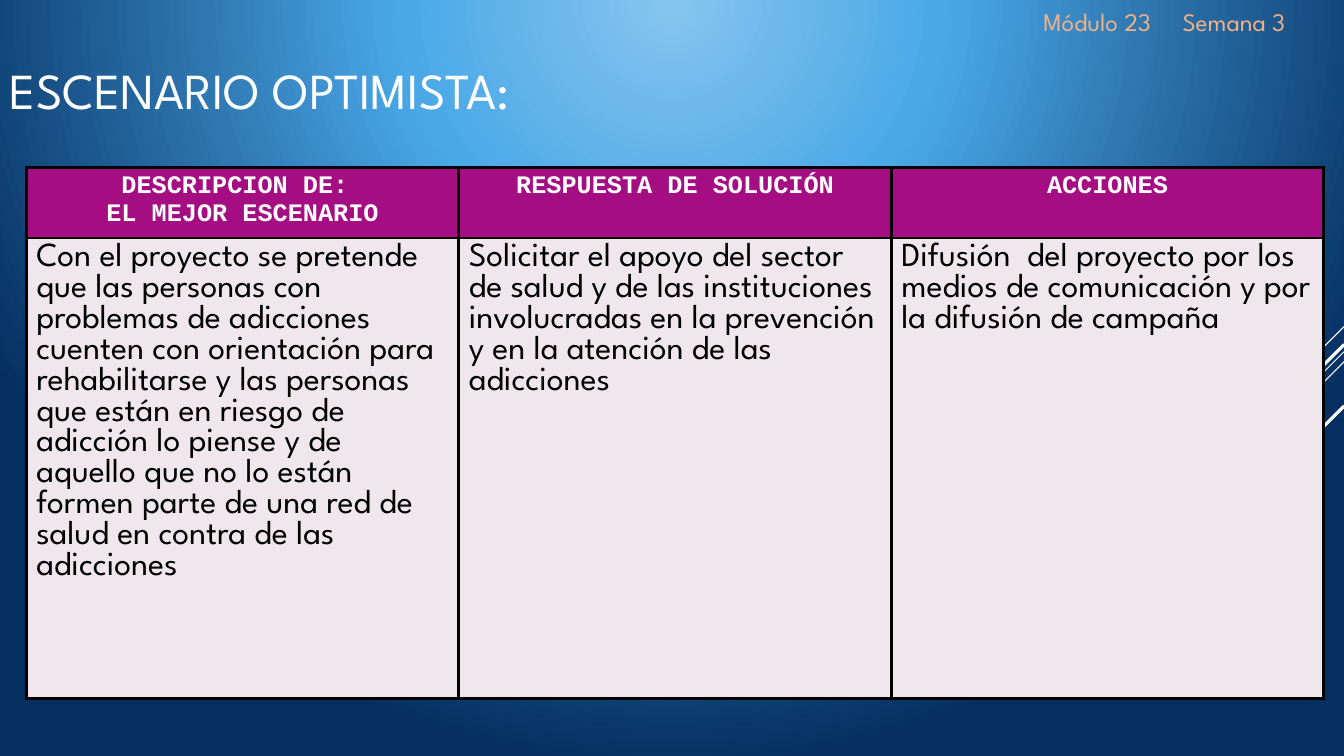
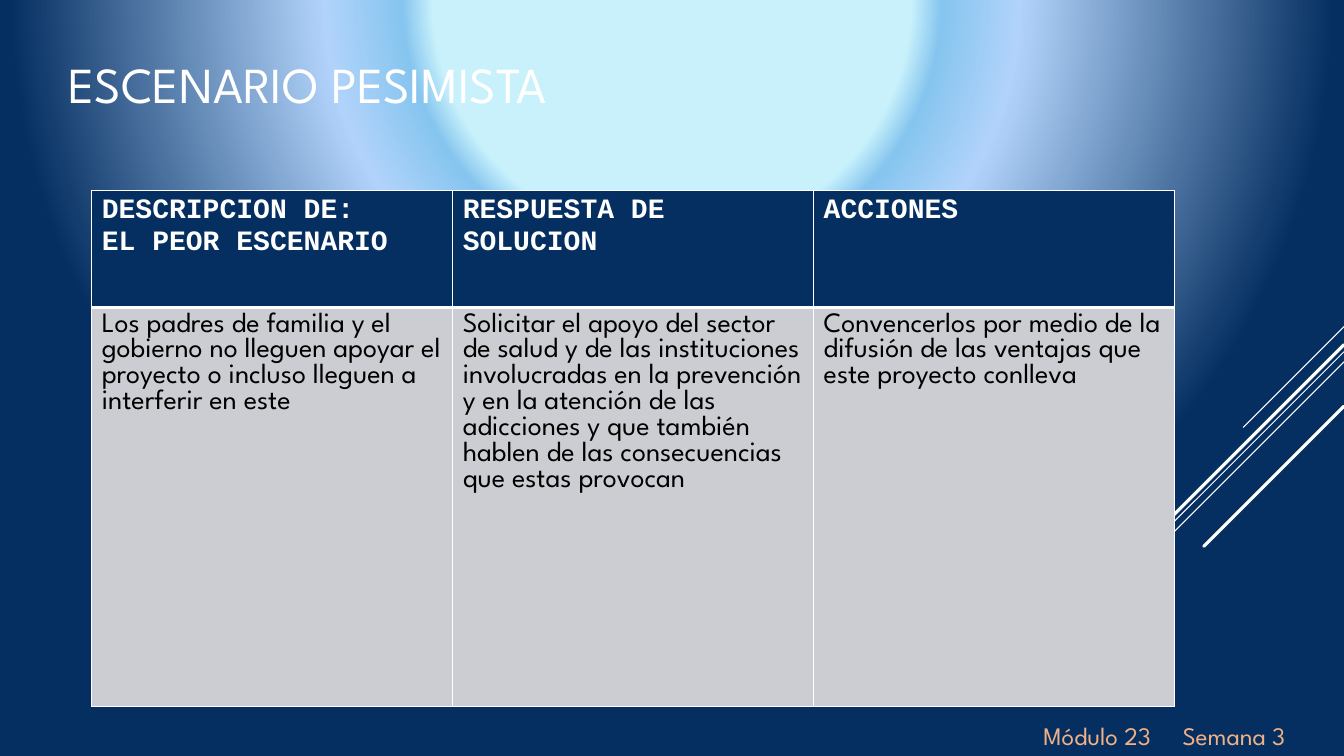
from dataclasses import dataclass

from lxml import etree
from pptx import Presentation
from pptx.dml.color import RGBColor
from pptx.enum.shapes import MSO_CONNECTOR
from pptx.enum.text import MSO_ANCHOR, PP_ALIGN
from pptx.oxml import parse_xml
from pptx.oxml.ns import nsdecls, qn
from pptx.util import Inches, Pt

BODY_FONT = "League Spartan"
HEADER_FONT = "Courier New"
WHITE = "FFFFFF"
BLACK = "000000"
NAVY = "052F61"
MAGENTA = "A50E82"
PEACH = "F1B187"
SLIDE_WIDTH = 13.33
SLIDE_HEIGHT = 7.5
LABEL_HEIGHT = 0.4


@dataclass(frozen=True)
class TextStyle:
    size: float
    color: str
    font: str = BODY_FONT
    bold: bool = False
    align: PP_ALIGN = PP_ALIGN.LEFT


@dataclass(frozen=True)
class Box:
    left: float
    top: float
    width: float
    height: float


@dataclass(frozen=True)
class Diagonal:
    start_y: float
    reach: float
    weight: float


@dataclass(frozen=True)
class TableRow:
    height: float
    fill: str
    style: TextStyle
    texts: tuple[str, ...]


@dataclass(frozen=True)
class Scenario:
    title: str
    title_box: Box
    gradient: tuple[tuple[int, str], ...]
    table_left: float
    table_top: float
    column_width: float
    rows: tuple[TableRow, ...]
    border_color: str
    border_weight: float
    divider_weight: float
    label_top: float


TITLE_STYLE = TextStyle(36, WHITE)
LABEL_STYLE = TextStyle(18, PEACH)

DIAGONALS = (
    Diagonal(3.24, 1.0, 0.75),
    Diagonal(3.49, 3.26, 0.75),
    Diagonal(3.59, 2.07, 0.75),
    Diagonal(3.42, 1.91, 2.25),
    Diagonal(4.03, 1.39, 2.25),
)

SCENARIOS = (
    Scenario(
        title="ESCENARIO OPTIMISTA:",
        title_box=Box(0, 0.01, 13.13, 1.76),
        gradient=((0, "86C5EF"), (35, "4AA8E7"), (100, NAVY)),
        table_left=0.26,
        table_top=1.66,
        column_width=4.29,
        rows=(
            TableRow(
                0.67,
                MAGENTA,
                TextStyle(18, WHITE, HEADER_FONT, True, PP_ALIGN.CENTER),
                (
                    "DESCRIPCION DE: \nEL MEJOR ESCENARIO",
                    "RESPUESTA DE SOLUCIÓN",
                    "ACCIONES",
                ),
            ),
            TableRow(
                4.57,
                "F0E7ED",
                TextStyle(24, BLACK),
                (
                    "Con el proyecto se pretende que las personas con problemas "
                    "de adicciones cuenten con orientación para rehabilitarse y "
                    "las personas que están en riesgo de adicción lo piense y de "
                    "aquello que no lo están formen parte de una red de salud en "
                    "contra de las adicciones",
                    "Solicitar el apoyo del sector de salud y de las instituciones "
                    "involucradas en la prevención y en la atención de las "
                    "adicciones",
                    "Difusión  del proyecto por los medios de comunicación y por "
                    "la difusión de campaña",
                ),
            ),
        ),
        border_color=BLACK,
        border_weight=2.25,
        divider_weight=2.25,
        label_top=0.01,
    ),
    Scenario(
        title="ESCENARIO PESIMISTA",
        title_box=Box(0.58, 0, 9.33, 1.65),
        gradient=((31, "C8F1FB"), (35, "86C5EF"), (45, "B1D3FB"), (86, NAVY)),
        table_left=0.91,
        table_top=1.89,
        column_width=3.58,
        rows=(
            TableRow(
                1.16,
                NAVY,
                TextStyle(20, WHITE, HEADER_FONT, True),
                (
                    "DESCRIPCION DE:\nEL PEOR ESCENARIO",
                    "RESPUESTA DE SOLUCION",
                    "ACCIONES",
                ),
            ),
            TableRow(
                3.96,
                "CCCDD2",
                TextStyle(20, BLACK),
                (
                    "Los padres de familia y el gobierno no lleguen apoyar el "
                    "proyecto o incluso lleguen a interferir en este",
                    "Solicitar el apoyo del sector de salud y de las instituciones "
                    "involucradas en la prevención y en la atención de las "
                    "adicciones y que también hablen de las consecuencias que "
                    "estas provocan",
                    "Convencerlos por medio de la difusión de las ventajas que "
                    "este proyecto conlleva",
                ),
            ),
        ),
        border_color=WHITE,
        border_weight=1,
        divider_weight=3,
        label_top=SLIDE_HEIGHT - LABEL_HEIGHT,
    ),
)


def rgb(color: str) -> RGBColor:
    return RGBColor.from_string(color)


def style_text(text_frame, style: TextStyle) -> None:
    for paragraph in text_frame.paragraphs:
        paragraph.alignment = style.align
        for run in paragraph.runs:
            run.font.name = style.font
            run.font.size = Pt(style.size)
            run.font.bold = style.bold
            run.font.color.rgb = rgb(style.color)


def add_text(slide, box: Box, text: str, style: TextStyle, anchor: MSO_ANCHOR):
    shape = slide.shapes.add_textbox(
        Inches(box.left), Inches(box.top), Inches(box.width), Inches(box.height)
    )
    text_frame = shape.text_frame
    text_frame.word_wrap = True
    text_frame.vertical_anchor = anchor
    text_frame.text = text
    style_text(text_frame, style)
    return shape


def add_module_label(slide, top: float) -> None:
    box = Box(10.25, top, 3.08, LABEL_HEIGHT)
    shape = add_text(slide, box, "Módulo 23\tSemana 3", LABEL_STYLE, MSO_ANCHOR.TOP)
    properties = shape.text_frame.paragraphs[0]._p.get_or_add_pPr()
    tabs = etree.SubElement(properties, qn("a:tabLst"))
    etree.SubElement(tabs, qn("a:tab"), pos=str(Inches(1.38)), algn="l")


def paint_background(slide, gradient: tuple[tuple[int, str], ...]) -> None:
    slide.background.fill.solid()
    solid = slide.element.find(".//" + qn("p:bgPr")).find(qn("a:solidFill"))
    stops = "".join(
        f'<a:gs pos="{position * 1000}"><a:srgbClr val="{color}"/></a:gs>'
        for position, color in gradient
    )
    radial = parse_xml(
        f'<a:gradFill {nsdecls("a")} rotWithShape="1"><a:gsLst>{stops}</a:gsLst>'
        '<a:path path="circle">'
        '<a:fillToRect l="50000" t="-80000" r="50000" b="180000"/>'
        "</a:path></a:gradFill>"
    )
    solid.getparent().replace(solid, radial)


def add_diagonal(slide, diagonal: Diagonal) -> None:
    connector = slide.shapes.add_connector(
        MSO_CONNECTOR.STRAIGHT,
        Inches(SLIDE_WIDTH),
        Inches(diagonal.start_y),
        Inches(SLIDE_WIDTH - diagonal.reach),
        Inches(diagonal.start_y + diagonal.reach),
    )
    connector.line.color.rgb = rgb(WHITE)
    connector.line.width = Pt(diagonal.weight)
    connector.line._get_or_add_ln().set("cap", "rnd")
    etree.SubElement(connector._element.spPr, qn("a:effectLst"))


def set_border(cell, side: str, color: str, weight: float) -> None:
    properties = cell._tc.get_or_add_tcPr()
    line = etree.SubElement(properties, qn(f"a:ln{side}"), w=str(Pt(weight)))
    fill = etree.SubElement(line, qn("a:solidFill"))
    etree.SubElement(fill, qn("a:srgbClr"), val=color)


def add_scenario_table(slide, scenario: Scenario) -> None:
    rows = scenario.rows
    column_count = len(rows[0].texts)
    table = slide.shapes.add_table(
        len(rows),
        column_count,
        Inches(scenario.table_left),
        Inches(scenario.table_top),
        Inches(scenario.column_width * column_count),
        Inches(sum(row.height for row in rows)),
    ).table
    table.first_row = False
    table.horz_banding = False
    for column in table.columns:
        column.width = Inches(scenario.column_width)
    for row_index, row in enumerate(rows):
        table.rows[row_index].height = Inches(row.height)
        divider_side = "B" if row_index == 0 else "T"
        for column_index, text in enumerate(row.texts):
            cell = table.cell(row_index, column_index)
            cell.text_frame.text = text
            style_text(cell.text_frame, row.style)
            for side in "LRTB":
                is_divider = side == divider_side
                weight = scenario.divider_weight if is_divider else scenario.border_weight
                set_border(cell, side, scenario.border_color, weight)
            cell.fill.solid()
            cell.fill.fore_color.rgb = rgb(row.fill)


def add_scenario_slide(presentation, scenario: Scenario) -> None:
    slide = presentation.slides.add_slide(presentation.slide_layouts[6])
    paint_background(slide, scenario.gradient)
    for diagonal in DIAGONALS:
        add_diagonal(slide, diagonal)
    add_text(slide, scenario.title_box, scenario.title, TITLE_STYLE, MSO_ANCHOR.MIDDLE)
    add_scenario_table(slide, scenario)
    add_module_label(slide, scenario.label_top)


def main() -> None:
    presentation = Presentation()
    presentation.slide_width = Inches(SLIDE_WIDTH)
    presentation.slide_height = Inches(SLIDE_HEIGHT)
    for scenario in SCENARIOS:
        add_scenario_slide(presentation, scenario)
    presentation.save("out.pptx")


if __name__ == "__main__":
    main()
